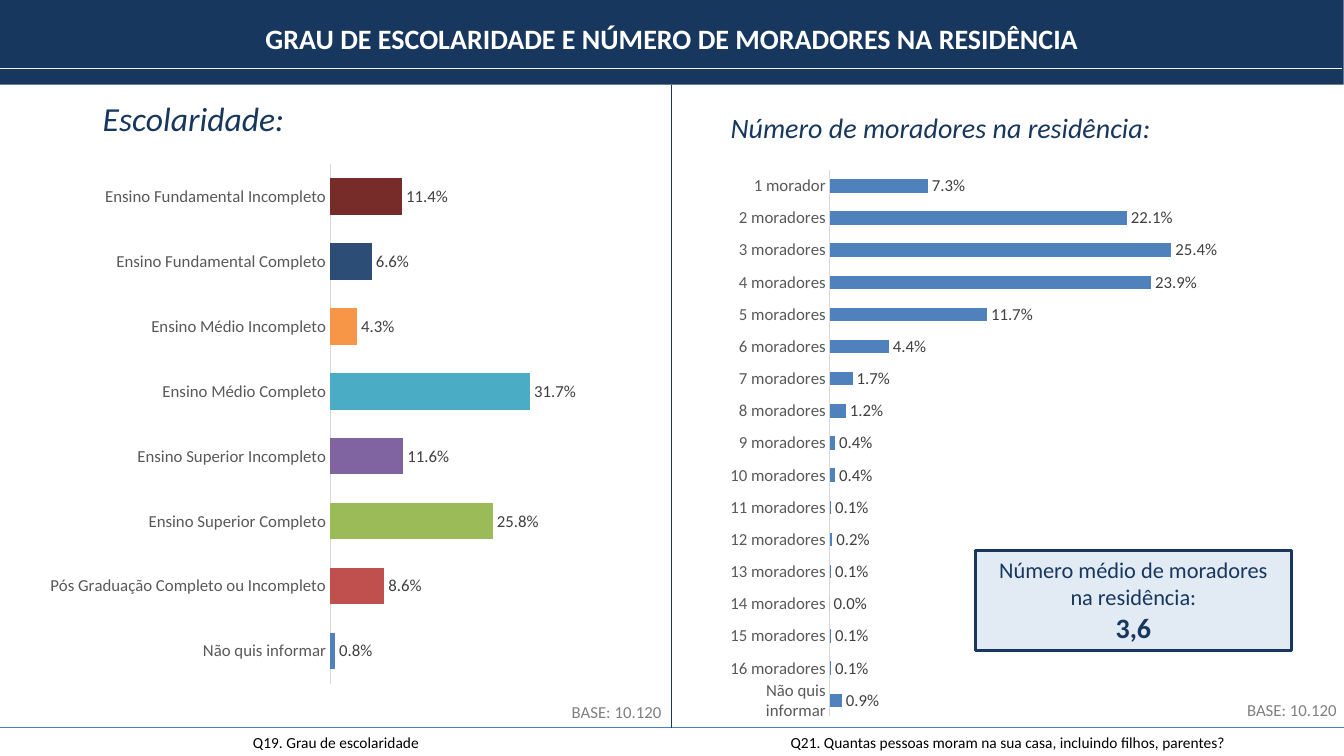
from dataclasses import dataclass

from lxml import etree
from pptx import Presentation
from pptx.chart.data import CategoryChartData
from pptx.dml.color import RGBColor
from pptx.enum.chart import XL_CHART_TYPE, XL_LABEL_POSITION, XL_TICK_MARK
from pptx.enum.shapes import MSO_CONNECTOR, MSO_SHAPE
from pptx.enum.text import MSO_ANCHOR, MSO_AUTO_SIZE, PP_ALIGN
from pptx.oxml.ns import qn
from pptx.util import Pt

BAR = XL_CHART_TYPE.BAR_CLUSTERED
OUTSIDE = XL_LABEL_POSITION.OUTSIDE_END
NO_TICK = XL_TICK_MARK.NONE
STRAIGHT = MSO_CONNECTOR.STRAIGHT
RECTANGLE = MSO_SHAPE.RECTANGLE
MIDDLE = MSO_ANCHOR.MIDDLE
GROW = MSO_AUTO_SIZE.SHAPE_TO_FIT_TEXT
LEFT, CENTER, RIGHT = PP_ALIGN.LEFT, PP_ALIGN.CENTER, PP_ALIGN.RIGHT

FONT = "Calibri"
PERCENT = "0.0%"
COLORS = {
    "navy": "17375E", "white": "FFFFFF", "black": "000000", "pale": "DCE6F2",
    "rule": "F2F2F2", "footer": "4B7EBC", "base": "808080", "axis": "D9D9D9",
    "category": "595959", "value": "404040", "bar": "4F81BD", "red": "C0504D",
    "green": "9BBB59", "purple": "8064A2", "aqua": "4BACC6", "orange": "F79646",
    "dark blue": "2C4D75", "dark red": "772C2A",
}
WIDTH, HEIGHT = 960, 540
FOOTER_TOP = 519.84
BANNER_HEIGHT = 60.48


@dataclass(frozen=True)
class Frame:
    left: float
    top: float
    width: float
    height: float

    def points(self) -> tuple:
        return Pt(self.left), Pt(self.top), Pt(self.width), Pt(self.height)


@dataclass(frozen=True)
class Caption:
    text: str
    frame: Frame
    size: float
    color: str
    align: int = LEFT
    bold: bool = False
    italic: bool = False
    wrap: bool = True


@dataclass(frozen=True)
class BarChart:
    frame: Frame
    plot: Frame
    values: dict
    maximum: float
    gap: int
    bar_colors: tuple = ()
    reverse: bool = False


CAPTIONS = [
    Caption("GRAU DE ESCOLARIDADE E NÚMERO DE MORADORES NA RESIDÊNCIA",
            Frame(0, 11.52, WIDTH, 31.68), 20, "white", CENTER, bold=True),
    Caption("Q19. Grau de escolaridade",
            Frame(0, FOOTER_TOP, 480, 20.88), 11, "black", CENTER),
    Caption("Q21. Quantas pessoas moram na sua casa, incluindo filhos, parentes?",
            Frame(480, FOOTER_TOP, 480, 20.88), 11, "black", CENTER),
    Caption("BASE: 10.120", Frame(315.36, 497.52, 164.16, 21.6), 12, "base", RIGHT),
    Caption("BASE: 10.120", Frame(797.76, 496.08, 164.16, 21.6), 12, "base", RIGHT),
    Caption("Escolaridade:", Frame(66.24, 66.24, 145.44, 36), 24, "navy",
            italic=True, wrap=False),
    Caption("Número de moradores na residência:", Frame(514.8, 75.6, 316.8, 31.68),
            20, "navy", italic=True, wrap=False),
]

SCHOOLING = BarChart(
    Frame(28.08, 109.44, 442.08, 386.64), Frame(0.47, 0.02, 0.51, 0.96),
    {
        "Não quis informar": 0.008,
        "Pós Graduação Completo ou Incompleto": 0.086,
        "Ensino Superior Completo": 0.258,
        "Ensino Superior Incompleto": 0.116,
        "Ensino Médio Completo": 0.317,
        "Ensino Médio Incompleto": 0.043,
        "Ensino Fundamental Completo": 0.066,
        "Ensino Fundamental Incompleto": 0.114,
    },
    0.5, 78,
    ("bar", "red", "green", "purple", "aqua", "orange", "dark blue", "dark red"),
)

RESIDENT_SHARES = [0.073, 0.221, 0.254, 0.239, 0.117, 0.044, 0.017, 0.012,
                   0.004, 0.004, 0.001, 0.002, 0.001, 0, 0.001, 0.001]
RESIDENTS = BarChart(
    Frame(514.08, 113.04, 374.4, 411.12), Frame(0.21, 0.02, 0.77, 0.95),
    {f"{count} {'morador' if count == 1 else 'moradores'}": share
     for count, share in enumerate(RESIDENT_SHARES, 1)} | {"Não quis informar": 0.009},
    0.3, 139, reverse=True,
)


def rgb(name: str) -> RGBColor:
    return RGBColor.from_string(COLORS[name])


def set_font(font, *, size: float, color: str, bold: bool = False, italic: bool = False) -> None:
    font.name, font.size, font.bold, font.italic = FONT, Pt(size), bold, italic
    font.color.rgb = rgb(color)


def write(para, text: str, *, align: int = LEFT, **style) -> None:
    para.alignment = align
    span = para.add_run()
    span.text = text
    set_font(span.font, **style)


def add_caption(page, caption: Caption) -> None:
    box = page.shapes.add_textbox(*caption.frame.points())
    box.text_frame.word_wrap = caption.wrap
    box.text_frame.auto_size = GROW
    write(box.text_frame.paragraphs[0], caption.text, align=caption.align, size=caption.size,
          color=caption.color, bold=caption.bold, italic=caption.italic)


def add_box(page, frame: Frame, fill: str):
    box = page.shapes.add_shape(RECTANGLE, *frame.points())
    box.shadow.inherit = False
    box.fill.solid()
    box.fill.fore_color.rgb = rgb(fill)
    box.line.fill.background()
    return box


def add_line(page, start: tuple, end: tuple, color: str, width: float):
    line = page.shapes.add_connector(STRAIGHT, *map(Pt, start + end))
    line.line.color.rgb = rgb(color)
    line.line.width = Pt(width)
    etree.SubElement(line.element.spPr, qn("a:effectLst"))
    return line


def place_plot(chart, plot: Frame) -> None:
    area = chart.element.chart.plotArea
    for old in area.findall(qn("c:layout")):
        area.remove(old)
    layout = etree.Element(qn("c:layout"))
    manual = etree.SubElement(layout, qn("c:manualLayout"))
    settings = {"layoutTarget": "inner", "xMode": "edge", "yMode": "edge",
                "x": plot.left, "y": plot.top, "w": plot.width, "h": plot.height}
    for tag, value in settings.items():
        etree.SubElement(manual, qn(f"c:{tag}")).set("val", str(value))
    area.insert(0, layout)


def add_bar_chart(page, details: BarChart) -> None:
    data = CategoryChartData(number_format=PERCENT)
    data.categories = list(details.values)
    data.add_series("Series 1", list(details.values.values()))
    chart = page.shapes.add_chart(BAR, *details.frame.points(), data).chart
    chart.has_legend = chart.has_title = False
    set_font(chart.font, size=10, color="black")
    place_plot(chart, details.plot)

    categories = chart.category_axis
    categories.major_tick_mark = categories.minor_tick_mark = NO_TICK
    categories.has_major_gridlines = False
    categories.reverse_order = details.reverse
    categories.format.line.color.rgb = rgb("axis")
    categories.format.line.width = Pt(0.75)
    set_font(categories.tick_labels.font, size=12, color="category")
    scale = chart.value_axis
    scale.minimum_scale, scale.maximum_scale = 0, details.maximum
    scale.has_major_gridlines = scale.visible = False

    plot = chart.plots[0]
    plot.gap_width = details.gap
    plot.vary_by_categories = False
    bars = plot.series[0]
    bars.format.fill.solid()
    bars.format.fill.fore_color.rgb = rgb("bar")
    for index, color in enumerate(details.bar_colors):
        fill = bars.points[index].format.fill
        fill.solid()
        fill.fore_color.rgb = rgb(color)
    labels = bars.data_labels
    labels.show_value = True
    labels.position = OUTSIDE
    labels.number_format, labels.number_format_is_linked = PERCENT, False
    set_font(labels.font, size=12, color="value")


def add_average(page) -> None:
    box = add_box(page, Frame(696.96, 393.12, 225.36, 71.28), "pale")
    tint = box.element.spPr.find(qn("a:solidFill"))[0]
    etree.SubElement(tint, qn("a:alpha")).set("val", "82000")
    box.line.color.rgb = rgb("navy")
    box.line.width = Pt(2)
    frame = box.text_frame
    frame.word_wrap, frame.vertical_anchor = True, MIDDLE
    write(frame.paragraphs[0], "Número médio de moradores na residência:",
          align=CENTER, size=16, color="navy")
    write(frame.add_paragraph(), "3,6", align=CENTER, size=20, color="navy", bold=True)


def main() -> None:
    deck = Presentation()
    deck.slide_width, deck.slide_height = Pt(WIDTH), Pt(HEIGHT)
    page = deck.slides.add_slide(deck.slide_layouts[6])
    add_line(page, (0, FOOTER_TOP), (WIDTH, FOOTER_TOP), "footer", 0.75)
    banner = add_box(page, Frame(-0.72, 0, 960.48, BANNER_HEIGHT), "navy")
    add_line(page, (-2.16, 48.96), (958.32, 48.96), "rule", 1)
    divider = add_line(page, (479.52, BANNER_HEIGHT), (479.52, FOOTER_TOP), "navy", 1)
    divider.begin_connect(banner, 2)
    for details in (SCHOOLING, RESIDENTS):
        add_bar_chart(page, details)
    add_average(page)
    for caption in CAPTIONS:
        add_caption(page, caption)
    deck.save("out.pptx")


if __name__ == "__main__":
    main()
